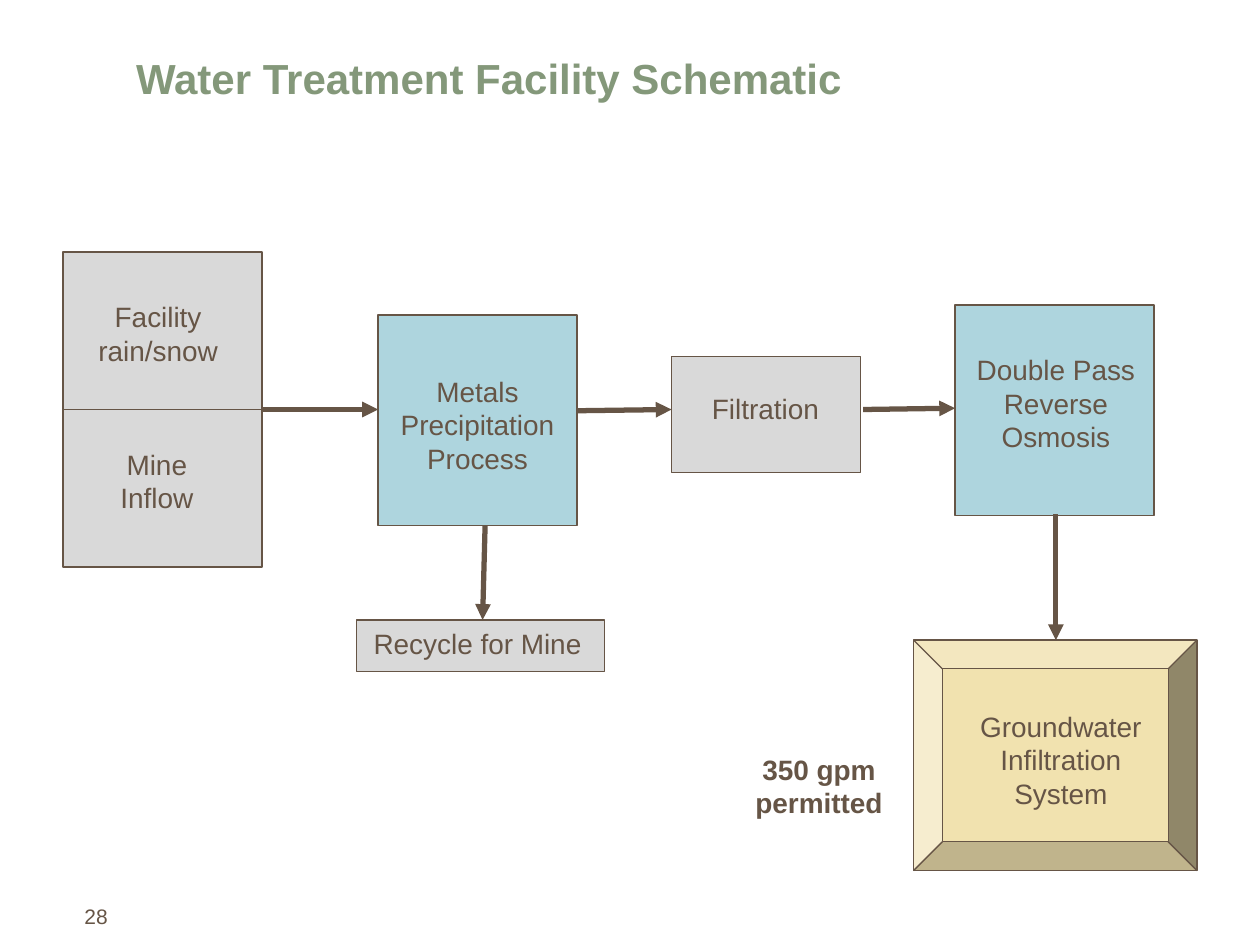
from lxml import etree
from pptx import Presentation
from pptx.dml.color import RGBColor
from pptx.enum.shapes import MSO_CONNECTOR, MSO_SHAPE as SHAPE
from pptx.enum.text import MSO_ANCHOR, PP_ALIGN
from pptx.oxml.ns import qn
from pptx.util import Inches, Pt

BROWN, GREEN = "665546", "84987A"
GRAY, BLUE, SAND = "D9D9D9", "AED5DE", "F1E2AF"


def rgb(color):
    return RGBColor.from_string(color)


def write(s, text, size, color=BROWN, bold=False, align=PP_ALIGN.LEFT, inset=0):
    """Fill a shape with wrapped, top-anchored Arial text."""
    tf = s.text_frame
    tf.word_wrap = True
    tf.vertical_anchor = MSO_ANCHOR.TOP
    tf.margin_left = tf.margin_right = Inches(inset)
    tf.margin_top = tf.margin_bottom = Inches(inset / 2)
    tf.text = text
    for p in tf.paragraphs:
        p.alignment = align
        for r in p.runs:
            r.font.name, r.font.size, r.font.bold = "Arial", Pt(size), bold
            r.font.color.rgb = rgb(color)


prs = Presentation()
prs.slide_width, prs.slide_height = Inches(10), Inches(7.5)
slide = prs.slides.add_slide(prs.slide_layouts[5])
shapes = slide.shapes

# Title and page number
title = shapes.title
title.left, title.top = Inches(1.08), Inches(0.5)
title.width, title.height = Inches(8.66), Inches(0.4)
write(title, "Water Treatment Facility Schematic", 24, GREEN, bold=True)
title.text_frame.paragraphs[0].line_spacing = Pt(23)

number = shapes.add_textbox(Inches(0.67), Inches(7.17), Inches(7.67), Inches(0.42))
write(number, "28", 12)

# Process boxes: preset, fill, left, top, width, height
boxes = [
    (SHAPE.FLOWCHART_PROCESS, GRAY, 0.5, 2, 1.58, 1.25),
    (SHAPE.FLOWCHART_PROCESS, GRAY, 0.5, 3.25, 1.58, 1.25),
    (SHAPE.RECTANGLE, BLUE, 3, 2.5, 1.58, 1.67),
    (SHAPE.RECTANGLE, GRAY, 2.83, 4.92, 1.97, 0.41),
    (SHAPE.RECTANGLE, GRAY, 5.33, 2.83, 1.5, 0.92),
    (SHAPE.RECTANGLE, BLUE, 7.58, 2.42, 1.58, 1.67),
    (SHAPE.BEVEL, SAND, 7.25, 5.08, 2.25, 1.83),
]
for preset, fill, *place in boxes:
    s = shapes.add_shape(preset, *map(Inches, place))
    s.shadow.inherit = False
    s.fill.solid()
    s.fill.fore_color.rgb = rgb(fill)
    s.line.color.rgb = rgb(BROWN)
    s.line.width = Pt(0.75)

# Flow arrows: from x, from y, to x, to y
arrows = [
    (2.08, 3.25, 3, 3.25),
    (4.58, 3.26, 5.33, 3.25),
    (6.85, 3.25, 7.58, 3.24),
    (3.85, 4.17, 3.83, 4.92),
    (8.38, 4.08, 8.38, 5.08),
]
for ends in arrows:
    s = shapes.add_connector(MSO_CONNECTOR.STRAIGHT, *map(Inches, ends))
    s.line.color.rgb = rgb(BROWN)
    s.line.width = Pt(3)
    etree.SubElement(s.line._get_or_add_ln(), qn("a:tailEnd"), type="triangle")
    etree.SubElement(s._element.spPr, qn("a:effectLst"))

# Labels: text, bold, left, top, width, height
labels = [
    ("Facility rain/snow", False, 0.67, 2.33, 1.17, 0.64),
    ("Mine\vInflow", False, 0.58, 3.5, 1.33, 0.64),
    ("Metals Precipitation Process", False, 2.83, 2.92, 1.92, 0.9),
    ("Recycle for Mine", False, 2.83, 4.92, 1.92, 0.37),
    ("Filtration", False, 4.95, 3.06, 2.25, 0.37),
    ("Double Pass Reverse\vOsmosis", False, 7.42, 2.75, 1.92, 0.9),
    ("Groundwater Infiltration\vSystem", False, 7.42, 5.58, 2, 0.9),
    ("350 gpm\npermitted", True, 5.75, 5.92, 1.5, 0.64),
]
for text, bold, *place in labels:
    s = shapes.add_textbox(*map(Inches, place))
    write(s, text, 16, bold=bold, align=PP_ALIGN.CENTER, inset=0.1)

prs.save("out.pptx")
